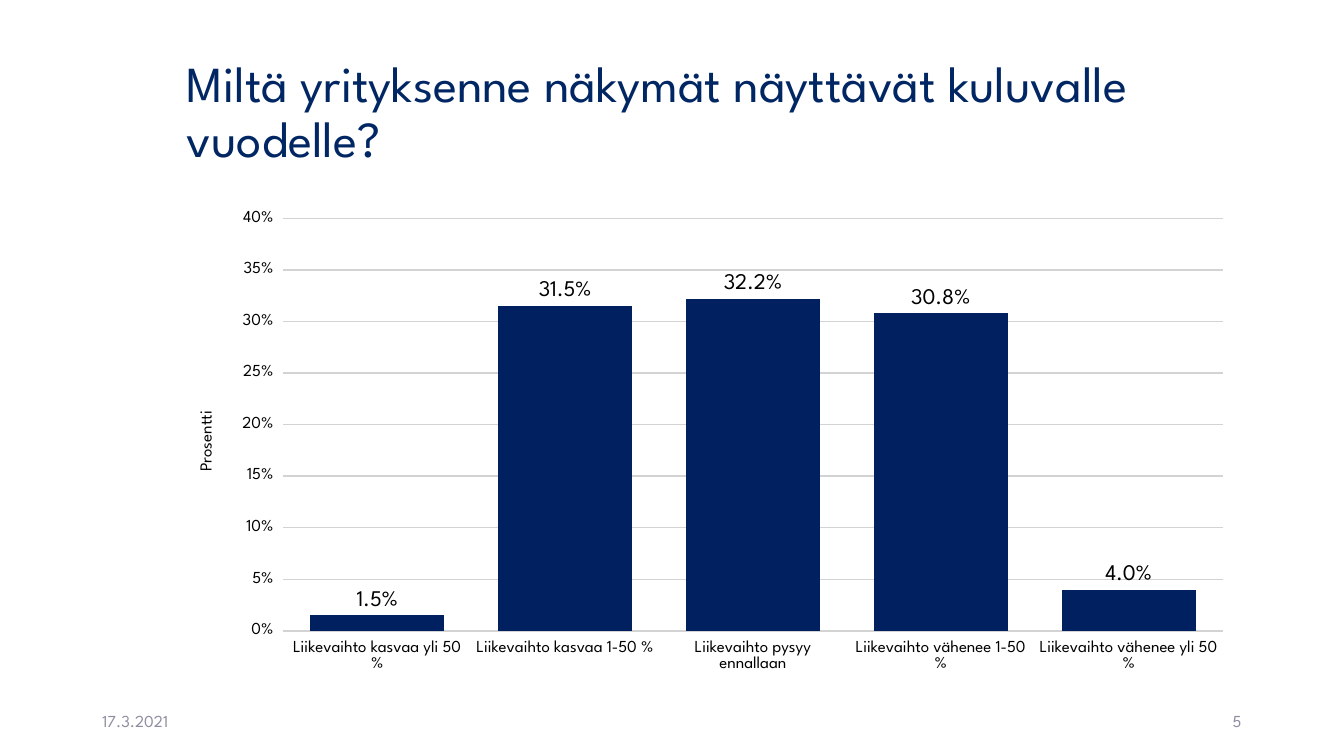
from lxml import etree
from pptx import Presentation
from pptx.chart.data import CategoryChartData
from pptx.dml.color import RGBColor
from pptx.enum.chart import XL_CHART_TYPE, XL_LABEL_POSITION, XL_TICK_MARK
from pptx.enum.text import MSO_ANCHOR, MSO_AUTO_SIZE, PP_ALIGN
from pptx.oxml.ns import qn
from pptx.util import Cm, Pt

FONT = "League Spartan"
TITLE_COLOR, BAR_COLOR, GRID_COLOR = "002663", "002060", "D3D3D3"
FOOTER_COLOR, CHART_TEXT_COLOR = "8C8E9F", "000000"
LEFT, RIGHT = PP_ALIGN.LEFT, PP_ALIGN.RIGHT
MIDDLE, NO_AUTOFIT = MSO_ANCHOR.MIDDLE, MSO_AUTO_SIZE.NONE
COLUMNS = XL_CHART_TYPE.COLUMN_CLUSTERED
OUTSIDE_END, TICK_OUTSIDE = XL_LABEL_POSITION.OUTSIDE_END, XL_TICK_MARK.OUTSIDE
OUTLOOK = {
    "Liikevaihto kasvaa yli 50 %": 0.015,
    "Liikevaihto kasvaa 1-50 %": 0.315,
    "Liikevaihto pysyy ennallaan": 0.322,
    "Liikevaihto vähenee 1-50 %": 0.308,
    "Liikevaihto vähenee yli 50 %": 0.04,
}
PLOT_AREA = {"x": 0.1, "y": 0.035, "w": 0.88, "h": 0.86}


def rgb(color):
    """Turn a hex string into a colour."""
    return RGBColor.from_string(color)


def style_font(font, size, color):
    """Set the typeface, size and colour of a font."""
    font.name, font.size, font.bold = FONT, Pt(size), False
    font.color.rgb = rgb(color)


def write_text(shape, text, size, color, alignment=LEFT):
    """Put one formatted, vertically centred paragraph into a shape."""
    frame = shape.text_frame
    frame.text = text
    frame.word_wrap = True
    frame.auto_size = NO_AUTOFIT
    frame.vertical_anchor = MIDDLE
    paragraph = frame.paragraphs[0]
    paragraph.alignment = alignment
    style_font(paragraph.runs[0].font, size, color)
    return paragraph


def add_title(slide, text, left, top, width, height):
    """Place the question in the title placeholder."""
    title = slide.shapes.title
    title.left, title.top, title.width, title.height = left, top, width, height
    write_text(title, text, 36, TITLE_COLOR).line_spacing = 0.9


def add_footer(slide, date, number, left, top, width, height):
    """Place the date and the slide number at the two ends of the footer."""
    box_width = Cm(7.62)
    entries = [(date, left, LEFT), (number, left + width - box_width, RIGHT)]
    for text, box_left, alignment in entries:
        box = slide.shapes.add_textbox(box_left, top, box_width, height)
        write_text(box, text, 12, FOOTER_COLOR, alignment)


def fix_plot_area(chart):
    """Give the inner plot area its share of the chart."""
    plot_area = chart.element.find(".//" + qn("c:plotArea"))
    for automatic in plot_area.findall(qn("c:layout")):
        plot_area.remove(automatic)
    layout = etree.Element(qn("c:layout"))
    manual = etree.SubElement(layout, qn("c:manualLayout"))
    settings = {"layoutTarget": "inner", "xMode": "edge", "yMode": "edge", **PLOT_AREA}
    for name, value in settings.items():
        etree.SubElement(manual, qn("c:" + name)).set("val", str(value))
    plot_area.insert(0, layout)


def style_axes(chart):
    """Format both axes, the gridlines and the value title."""
    for axis in (chart.category_axis, chart.value_axis):
        axis.major_tick_mark = TICK_OUTSIDE
        axis.format.line.fill.background()
        style_font(axis.tick_labels.font, 12, CHART_TEXT_COLOR)
    value_axis = chart.value_axis
    value_axis.minimum_scale, value_axis.maximum_scale = 0, 0.4
    value_axis.major_unit = 0.05
    value_axis.tick_labels.number_format = "0%"
    value_axis.tick_labels.number_format_is_linked = False
    gridlines = value_axis.major_gridlines.format.line
    gridlines.color.rgb, gridlines.width = rgb(GRID_COLOR), Pt(1)
    frame = value_axis.axis_title.text_frame
    frame.text = "Prosentti"
    style_font(frame.paragraphs[0].runs[0].font, 12, CHART_TEXT_COLOR)


def add_outlook_chart(slide, left, top, width, height):
    """Draw the share of answers as labelled columns."""
    chart_data = CategoryChartData(number_format="0.0%")
    chart_data.categories = list(OUTLOOK)
    chart_data.add_series("Series 1", list(OUTLOOK.values()))
    chart = slide.shapes.add_chart(COLUMNS, left, top, width, height, chart_data).chart
    chart.has_title = chart.has_legend = False
    style_font(chart.font, 11, CHART_TEXT_COLOR)
    style_axes(chart)
    fix_plot_area(chart)
    plot = chart.plots[0]
    plot.gap_width, plot.vary_by_categories = 40, False
    fill = plot.series[0].format.fill
    fill.solid()
    fill.fore_color.rgb = rgb(BAR_COLOR)
    labels = plot.series[0].data_labels
    labels.show_value, labels.position = True, OUTSIDE_END
    labels.number_format, labels.number_format_is_linked = "0.0%", False
    style_font(labels.font, 16, CHART_TEXT_COLOR)


def main():
    """Build the slide and save it."""
    presentation = Presentation()
    presentation.slide_width, presentation.slide_height = Cm(33.87), Cm(19.05)
    slide = presentation.slides.add_slide(presentation.slide_layouts[5])
    left, width = Cm(4.45), Cm(26.9)
    question = "Miltä yrityksenne näkymät näyttävät kuluvalle vuodelle?"
    add_title(slide, question, left, Cm(1.02), width, Cm(3.68))
    add_footer(slide, "17.3.2021", "5", Cm(2.33), Cm(17.66), Cm(29.21), Cm(1.01))
    add_outlook_chart(slide, left, Cm(5.08), width, Cm(12.09))
    presentation.save("out.pptx")


if __name__ == "__main__":
    main()
